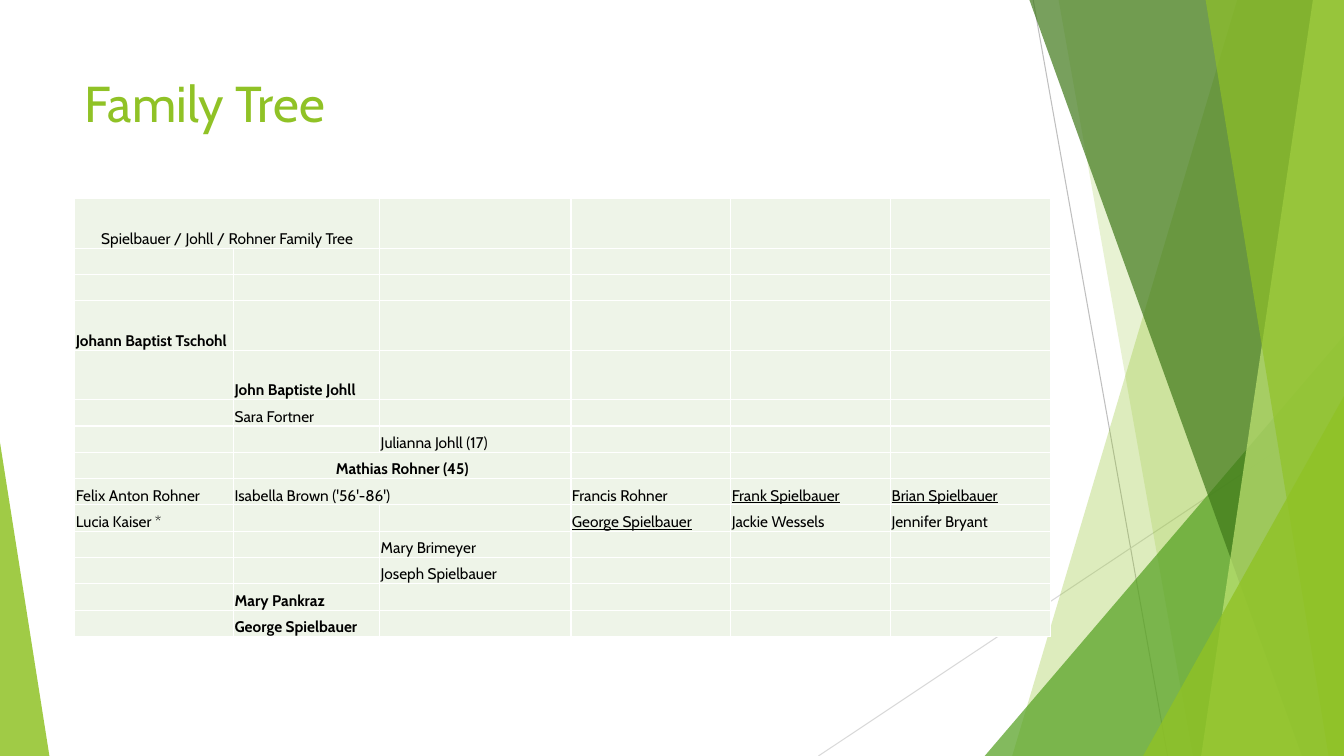
from lxml import etree
from pptx import Presentation
from pptx.dml.color import RGBColor
from pptx.enum.shapes import MSO_CONNECTOR, MSO_SHAPE
from pptx.enum.text import MSO_ANCHOR, PP_ALIGN
from pptx.oxml.ns import qn
from pptx.util import Pt

STRAIGHT = MSO_CONNECTOR.STRAIGHT
TRIANGLE = MSO_SHAPE.ISOSCELES_TRIANGLE
TOP, BOTTOM = MSO_ANCHOR.TOP, MSO_ANCHOR.BOTTOM
LEFT, CENTER = PP_ALIGN.LEFT, PP_ALIGN.CENTER

LIME = RGBColor(0x90, 0xC2, 0x26)
PALE_LIME = RGBColor(0xC0, 0xE4, 0x74)
GREEN = RGBColor(0x54, 0xA0, 0x21)
DARK_GREEN = RGBColor(0x3F, 0x78, 0x19)
CELL_GREEN = RGBColor(0xEE, 0xF4, 0xE8)
GRAY = RGBColor(0xBF, 0xBF, 0xBF)
LIGHT_GRAY = RGBColor(0xD9, 0xD9, 0xD9)
BLACK = RGBColor(0, 0, 0)
WHITE = RGBColor(0xFF, 0xFF, 0xFF)

FONT = "Cabin"
WIDTH, HEIGHT = 960, 540
BLEED = 0.6

TITLE = "Family Tree"
TITLE_BOX = (53.3, 48.2, 676.8, 103.7)

RAYS = [
    ((738, 0), (834, HEIGHT), GRAY),
    ((WIDTH, 290), (584.6, HEIGHT), LIGHT_GRAY),
]

# (row, column): text, format
PEOPLE = {
    (0, 0): ("Spielbauer / Johll / Rohner Family Tree", {"align": CENTER}),
    (3, 0): ("Johann Baptist Tschohl", {"bold": True}),
    (4, 1): ("John Baptiste Johll", {"bold": True}),
    (5, 1): ("Sara Fortner", {}),
    (6, 2): ("Julianna Johll (17)", {}),
    (7, 1): ("Mathias Rohner (45)", {"bold": True, "align": CENTER}),
    (8, 0): ("Felix Anton Rohner", {}),
    (8, 1): ("Isabella Brown ('56'-86')", {}),
    (8, 3): ("Francis Rohner", {}),
    (8, 4): ("Frank Spielbauer", {"underline": True}),
    (8, 5): ("Brian Spielbauer", {"underline": True}),
    (9, 0): ("Lucia Kaiser *", {}),
    (9, 3): ("George Spielbauer", {"underline": True}),
    (9, 4): ("Jackie Wessels", {}),
    (9, 5): ("Jennifer Bryant", {}),
    (10, 2): ("Mary Brimeyer", {}),
    (11, 2): ("Joseph Spielbauer", {}),
    (12, 1): ("Mary Pankraz", {"bold": True}),
    (13, 1): ("George Spielbauer", {"bold": True}),
}
DOUBLE_CELLS = [(0, 0), (7, 1), (8, 1)]
COLUMN_WIDTHS = [113.4, 104.4, 136.6] + [114.2] * 3
ROW_COUNT = 14
TALL_ROWS = {0, 3, 4}
ROW_HEIGHTS = [35.3 if row in TALL_ROWS else 18.8 for row in range(ROW_COUNT)]
TREE_LEFT, TREE_TOP = 53.5, 142
TREE_SIZE = 11


def write(frame, text, size=TREE_SIZE, color=BLACK, bold=False,
          underline=False, align=LEFT):
    paragraph = frame.paragraphs[0]
    paragraph.alignment = align
    run = paragraph.add_run()
    run.text = text
    font = run.font
    font.name, font.size, font.color.rgb = FONT, Pt(size), color
    font.bold, font.underline = bold, underline


def paint(shape, color, opacity):
    shape.shadow.inherit = False
    shape.fill.solid()
    shape.fill.fore_color.rgb = color
    shape.line.fill.background()
    swatch = shape.fill._xPr.find(qn("a:solidFill"))[0]
    etree.SubElement(swatch, qn("a:alpha"), val=str(opacity * 1000))


def ribbon(shapes, top_x, bottom_x):
    builder = shapes.build_freeform(top_x, -BLEED, scale=Pt(1))
    builder.add_line_segments(
        [(WIDTH, -BLEED), (WIDTH, HEIGHT), (bottom_x, HEIGHT)], close=True)
    return builder.convert_to_shape()


def corner(shapes, left, top, width, apex):
    triangle = shapes.add_shape(
        TRIANGLE, Pt(left), Pt(top), Pt(width), Pt(HEIGHT - top))
    triangle.adjustments[0] = apex
    return triangle


FACETS = [
    (ribbon, (884.2, 722.9), LIME, 30),
    (ribbon, (756, 851.8), LIME, 20),
    (corner, (703.4, 239.8, 256.6, 1), GREEN, 72),
    (ribbon, (735.1, 929.5), DARK_GREEN, 70),
    (ribbon, (938.2, 858.2), PALE_LIME, 70),
    (ribbon, (861.1, 949), LIME, 65),
    (corner, (816.5, 283, 143.5, 1), LIME, 80),
    (corner, (0, 316.1, 35.3, 0), LIME, 85),
]


def style_cell(cell):
    cell.margin_left = cell.margin_right = cell.margin_top = Pt(0.7)
    cell.margin_bottom = 0
    cell.vertical_anchor = BOTTOM
    properties = cell._tc.get_or_add_tcPr()
    for side in ("a:lnL", "a:lnR", "a:lnT", "a:lnB"):
        border = etree.SubElement(properties, qn(side), w=str(Pt(1)))
        fill = etree.SubElement(border, qn("a:solidFill"))
        etree.SubElement(fill, qn("a:srgbClr"), val=str(WHITE))
    cell.fill.solid()
    cell.fill.fore_color.rgb = CELL_GREEN


def add_rays(shapes):
    for start, end, color in RAYS:
        ray = shapes.add_connector(STRAIGHT, *map(Pt, start + end))
        ray.line.color.rgb = color
        ray.line.width = Pt(0.75)
        etree.SubElement(ray._element.spPr, qn("a:effectLst"))


def add_tree(shapes):
    tree = shapes.add_table(
        ROW_COUNT, len(COLUMN_WIDTHS), Pt(TREE_LEFT), Pt(TREE_TOP),
        Pt(sum(COLUMN_WIDTHS)), Pt(sum(ROW_HEIGHTS))).table
    tree.first_row = tree.horz_banding = False
    for column, width in zip(tree.columns, COLUMN_WIDTHS):
        column.width = Pt(width)
    for r, height in enumerate(ROW_HEIGHTS):
        tree.rows[r].height = Pt(height)
        for c in range(len(COLUMN_WIDTHS)):
            cell = tree.cell(r, c)
            style_cell(cell)
            if (r, c) in PEOPLE:
                person, style = PEOPLE[r, c]
                write(cell.text_frame, person, **style)
            else:
                etree.SubElement(cell.text_frame.paragraphs[0]._p,
                                 qn("a:endParaRPr"), sz=str(TREE_SIZE * 100))
    for r, c in DOUBLE_CELLS:
        tree.cell(r, c).merge(tree.cell(r, c + 1))


def main():
    deck = Presentation()
    deck.slide_width, deck.slide_height = Pt(WIDTH), Pt(HEIGHT)
    shapes = deck.slides.add_slide(deck.slide_layouts[6]).shapes
    add_rays(shapes)
    for draw, geometry, color, opacity in FACETS:
        paint(draw(shapes, *geometry), color, opacity)
    heading = shapes.add_textbox(*map(Pt, TITLE_BOX)).text_frame
    heading.word_wrap = True
    heading.vertical_anchor = TOP
    write(heading, TITLE, size=36, color=LIME)
    add_tree(shapes)
    deck.save("out.pptx")


if __name__ == "__main__":
    main()
